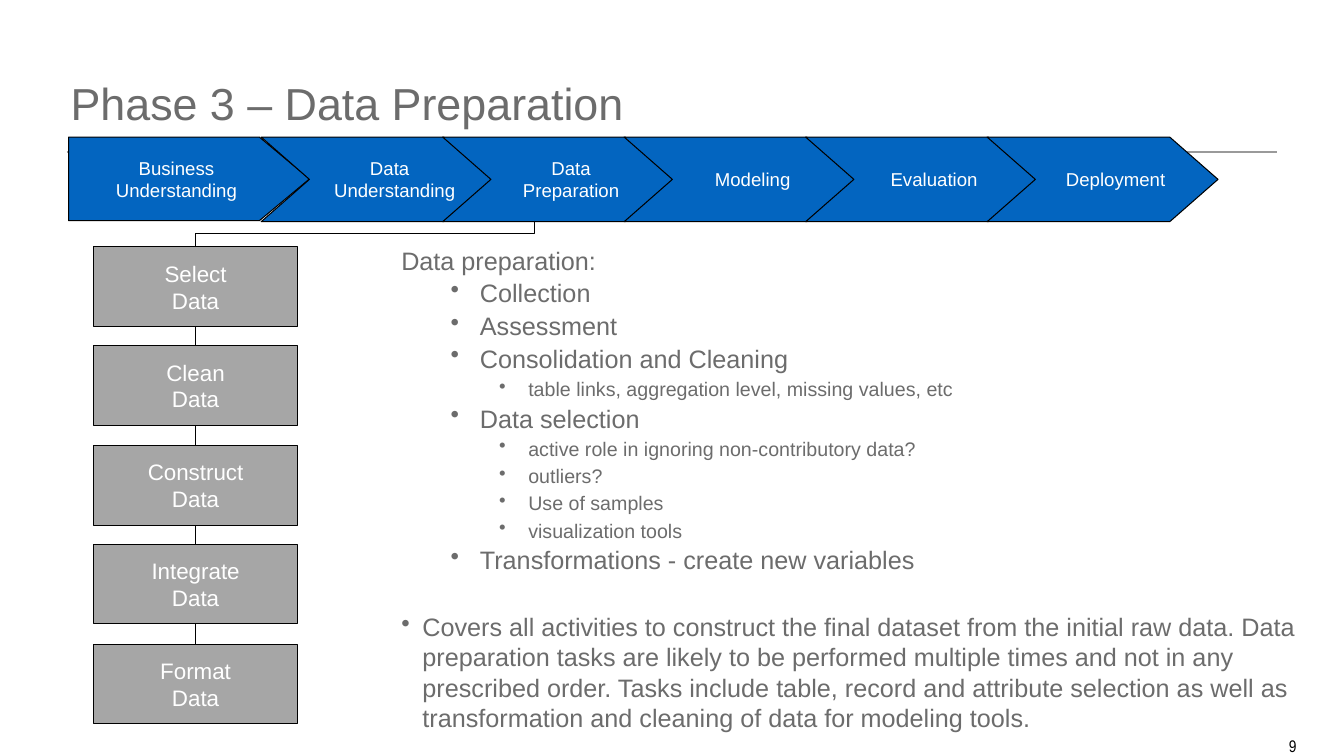
from lxml.etree import SubElement
from pptx import Presentation
from pptx.dml.color import RGBColor
from pptx.enum.shapes import MSO_CONNECTOR, MSO_SHAPE
from pptx.enum.text import MSO_ANCHOR, PP_ALIGN
from pptx.oxml.ns import qn
from pptx.util import Pt

PX = 9144  # 100 px to the inch
GREY, WHITE, BLACK, BLUE = "6C6C6C", "FFFFFF", "000000", "0365C0"
tint = RGBColor.from_string

deck = Presentation()
deck.slide_width, deck.slide_height = 1333 * PX, 750 * PX
slide = deck.slides.add_slide(deck.slide_layouts[6])
shapes = slide.shapes


def write(frame, pad, lines, hue, face="Arial", align=PP_ALIGN.LEFT):
    """Fill a frame with (text, size, left margin) lines."""
    frame.margin_left = frame.margin_right = pad[0] * PX
    frame.margin_top = frame.margin_bottom = pad[1] * PX
    for i, (text, size, left) in enumerate(lines):
        para = frame.paragraphs[0] if i == 0 else frame.add_paragraph()
        para.alignment = align
        if left:
            para._p.get_or_add_pPr().set("marL", str(left * PX))
        run = para.add_run()
        run.text = text
        run.font.size, run.font.name = Pt(size), face
        run.font.color.rgb = tint(hue)


def block(kind, box, fill, lines):
    """Add a filled, outlined shape with centred text."""
    shape = shapes.add_shape(kind, *[v * PX for v in box])
    shape.shadow.inherit = False
    shape.fill.solid()
    shape.fill.fore_color.rgb = tint(fill)
    shape.line.color.rgb = tint(BLACK)
    shape.line.width = Pt(0.75)
    frame = shape.text_frame
    frame.word_wrap = False
    frame.vertical_anchor = MSO_ANCHOR.MIDDLE
    write(frame, (11, 6), lines, WHITE, align=PP_ALIGN.CENTER)
    return shape


# Rule under the title
rule = shapes.add_connector(MSO_CONNECTOR.STRAIGHT, 66 * PX, 151 * PX, 1267 * PX, 151 * PX)
links = [(rule, "9A9A9A", 1)]

# Title
title = shapes.add_textbox(66 * PX, 25 * PX, 1208 * PX, 107 * PX).text_frame
title.word_wrap = True
title.vertical_anchor = MSO_ANCHOR.BOTTOM
write(title, (4, 4), [("Phase 3 – Data Preparation", 32, 0)], GREY)

# Body: text, level (0 to 2), bullet
points = [
    ("Data preparation:", 0, False),
    ("Collection", 1, True),
    ("Assessment", 1, True),
    ("Consolidation and Cleaning", 1, True),
    ("table links, aggregation level, missing values, etc", 2, True),
    ("Data selection", 1, True),
    ("active role in ignoring non-contributory data?", 2, True),
    ("outliers?", 2, True),
    ("Use of samples", 2, True),
    ("visualization tools", 2, True),
    ("Transformations - create new variables", 1, True),
    ("Covers all activities to construct the final dataset from the initial raw data. "
     "Data preparation tasks are likely to be performed multiple times and not in any "
     "prescribed order. Tasks include table, record and attribute selection as well as "
     "transformation and cleaning of data for modeling tools.", 0, True),
]
sizes, lefts, hangs = (18, 18, 14), (21, 78, 126), (21, 29, 29)
body = shapes.add_textbox(394 * PX, 245 * PX, 903 * PX, 496 * PX).text_frame
body.word_wrap = True
write(body, (4, 4), [(text, sizes[lev], lefts[lev]) for text, lev, _ in points], GREY)
for para, (text, lev, dot) in zip(body.paragraphs, points):
    para.level = lev
    para.space_before = Pt(6 if lev else 26.5)
    para.line_spacing = 0.8 if lev or not dot else 1.0
    props = para._p.get_or_add_pPr()
    props.set("indent", str(-hangs[lev] * PX))
    if dot:
        SubElement(props, qn("a:buChar")).set("char", "•")

# Page number
page = shapes.add_textbox(1266 * PX, 726 * PX, 24 * PX, 26 * PX).text_frame
write(page, (4, 4), [("9", 12, 0)], BLACK, "Arial Narrow", PP_ALIGN.RIGHT)
page.word_wrap = True

# Phase arrows: the first is a plate, the rest are chevrons at an equal step
plate = block(MSO_SHAPE.PENTAGON, (68, 136, 239, 83), BLUE,
              [("Business", 13.3, 0), ("Understanding", 13.3, 0)])
plate.adjustments[0] = 0.6
phases = [
    [("Data", 26), ("Understanding", 36)],
    [("Data", 26), ("Preparation", 26)],
    [("Modeling", 26)],
    [("Evaluation", 26)],
    [("Deployment", 26)],
]
for i, words in enumerate(phases):
    arrow = block(MSO_SHAPE.CHEVRON, (259 + 180 * i, 136, 229, 84), BLUE,
                  [(word, 13.3, left) for word, left in words])
    arrow.adjustments[0] = 0.57

# Task boxes, each joined to the one above
last = None
for i, task in enumerate(("Select", "Clean", "Construct", "Integrate", "Format")):
    box = block(MSO_SHAPE.FLOWCHART_PROCESS, (93, 245 + 197 * i // 2, 202, 79), "A6A6A6",
                [(task, 16, 0), ("Data", 16, 0)])
    if last:
        link = shapes.add_connector(MSO_CONNECTOR.STRAIGHT, 0, 0, 0, 0)
        link.begin_connect(last, 2)
        link.end_connect(box, 0)
        links.append((link, BLACK, 0.75))
    last = box

# Elbow from Data Preparation to the first task, turned a quarter
elbow = shapes.add_connector(MSO_CONNECTOR.ELBOW, 349 * PX, 64 * PX, 375 * PX, 400 * PX)
elbow._element.spPr.find(qn("a:xfrm")).set("rot", str(90 * 60000))
links.append((elbow, BLACK, 0.75))

# Line styles
for link, hue, width in links:
    link.line.color.rgb = tint(hue)
    link.line.width = Pt(width)
    SubElement(link._element.spPr, qn("a:effectLst"))

deck.save("out.pptx")
